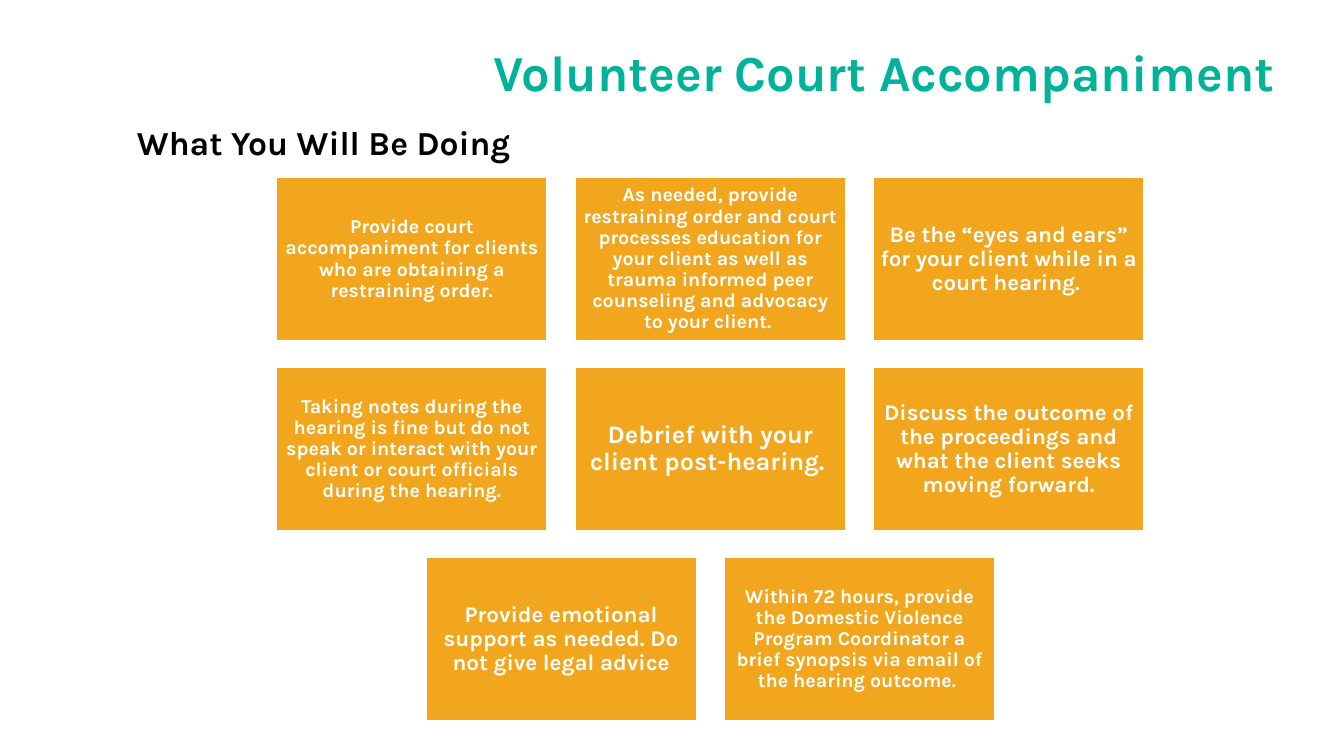
import pptx
import pptx.util
import pptx.dml.color
import pptx.enum.shapes
import pptx.enum.text

Inches = pptx.util.Inches
Pt = pptx.util.Pt
ALIGN = pptx.enum.text.PP_ALIGN
ANCHOR = pptx.enum.text.MSO_ANCHOR

CARD_WIDTH, CARD_HEIGHT = 2.69, 1.62
COLUMN_PITCH, ROW_PITCH = 2.96, 1.885
GRID_CENTER, GRID_TOP = 7.045, 1.76

DUTY_ROWS = [
    [
        ("Provide court accompaniment for clients who are obtaining a restraining order.", 14),
        ("As needed, provide restraining order and court processes education for your client "
         "as well as trauma informed peer counseling and advocacy to your client. ", 14),
        ("Be the “eyes and ears” for your client while in a court hearing. ", 16),
    ],
    [
        ("Taking notes during the hearing is fine but do not speak or interact with your client "
         "or court officials during the hearing.", 14),
        ("Debrief with your client post-hearing. ", 18),
        ("Discuss the outcome of the proceedings and what the client seeks moving forward.", 16),
    ],
    [
        ("Provide emotional support as needed. Do not give legal advice", 16),
        ("Within 72 hours, provide the Domestic Violence Program Coordinator a brief synopsis "
         "via email of the hearing outcome. ", 14),
    ],
]


def color(value):
    """Turn a hex string into a colour."""
    return pptx.dml.color.RGBColor.from_string(value)


def write(frame, text, size, ink, align, anchor, spacing=1.0):
    """Write one bold paragraph into a text frame."""
    frame.word_wrap = True
    frame.vertical_anchor = anchor
    paragraph = frame.paragraphs[0]
    paragraph.alignment = align
    paragraph.line_spacing = spacing
    run = paragraph.add_run()
    run.text = text
    run.font.name = "Karla"
    run.font.size = Pt(size)
    run.font.bold = True
    run.font.color.rgb = color(ink)


def add_heading(slide, box, *style):
    """Add a heading in a text box."""
    heading = slide.shapes.add_textbox(*map(Inches, box))
    write(heading.text_frame, *style)


def add_card(slide, left, top, duty, size):
    """Add one duty card."""
    card = slide.shapes.add_shape(
        pptx.enum.shapes.MSO_SHAPE.RECTANGLE,
        Inches(left), Inches(top), Inches(CARD_WIDTH), Inches(CARD_HEIGHT))
    card.shadow.inherit = False
    card.fill.solid()
    card.fill.fore_color.rgb = color("F1A61D")
    card.line.color.rgb = color("FFFFFF")
    card.line.width = Pt(1.5)
    frame = card.text_frame
    inset = Inches(0.06 if size == 14 else 0.07)
    frame.margin_left = frame.margin_right = inset
    frame.margin_top = frame.margin_bottom = inset
    write(frame, duty, size, "FFFFFF", ALIGN.CENTER, ANCHOR.MIDDLE, 0.9)


def add_duties(slide):
    """Lay out the duty cards in centred rows."""
    for row, duties in enumerate(DUTY_ROWS):
        row_width = (len(duties) - 1) * COLUMN_PITCH + CARD_WIDTH
        row_left = GRID_CENTER - row_width / 2
        for column, (duty, size) in enumerate(duties):
            add_card(slide, row_left + column * COLUMN_PITCH,
                     GRID_TOP + row * ROW_PITCH, duty, size)


def main():
    """Build the slide and save it."""
    deck = pptx.Presentation()
    deck.slide_width = Inches(13.33)
    deck.slide_height = Inches(7.5)
    slide = deck.slides.add_slide(deck.slide_layouts[6])
    add_heading(slide, (2.7, 0.35, 10.04, 0.72), "Volunteer Court Accompaniment",
                36, "00B398", ALIGN.RIGHT, ANCHOR.BOTTOM, 0.9)
    add_duties(slide)
    add_heading(slide, (1.01, 1.16, 4.4, 0.5), "What You Will Be Doing",
                24, "000000", ALIGN.CENTER, ANCHOR.TOP)
    deck.save("out.pptx")


if __name__ == "__main__":
    main()
